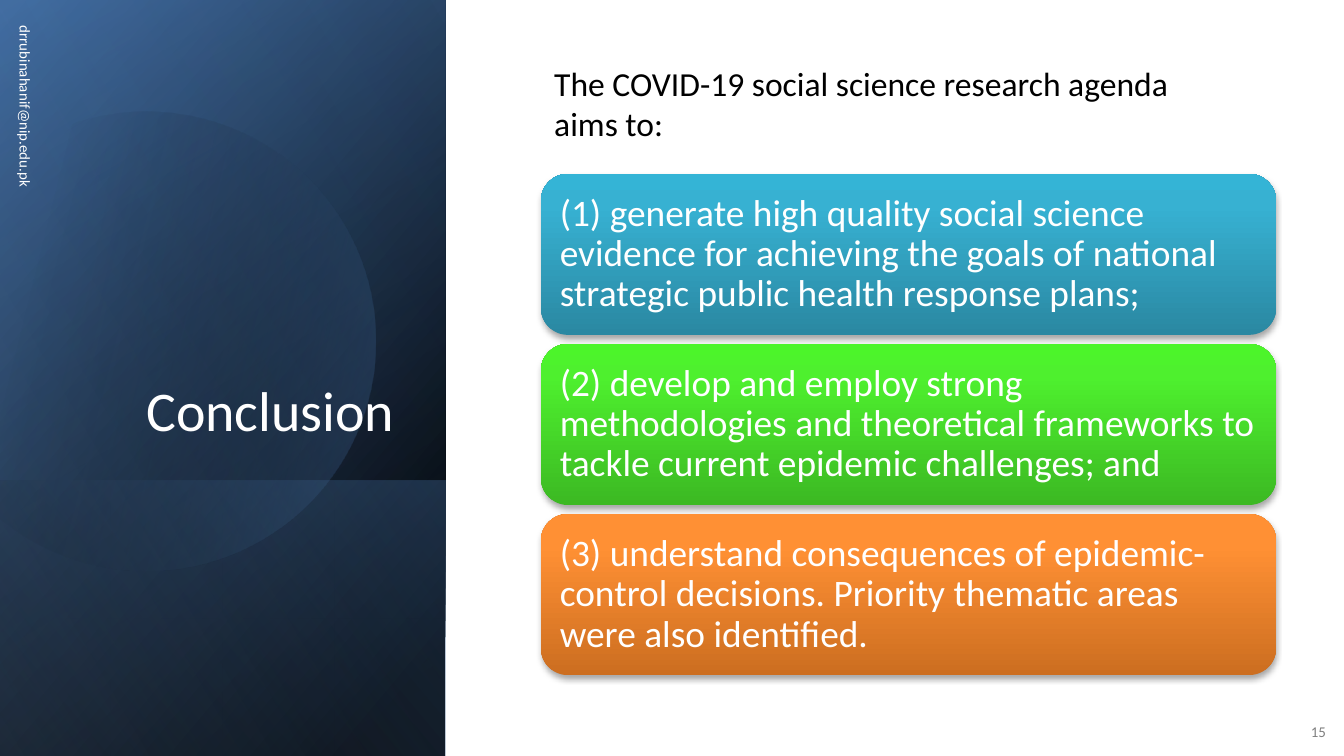
import math
import pptx
import pptx.util
import pptx.dml.color
import pptx.enum.shapes
import pptx.enum.text
import pptx.oxml

RGB = pptx.dml.color.RGBColor
WHITE = RGB(255, 255, 255)
BLACK = RGB(0, 0, 0)
GRAY = RGB(128, 128, 128)
BLUE = RGB(0x4F, 0x81, 0xBD)
DEEP = RGB(0x37, 0x60, 0x92)
PALE = RGB(0x95, 0xB3, 0xD7)
NS = 'xmlns:a="http://schemas.openxmlformats.org/drawingml/2006/main"'
KIND = pptx.enum.shapes.MSO_SHAPE
ALIGN = pptx.enum.text.PP_ALIGN
ANCHOR = pptx.enum.text.MSO_ANCHOR

# A 16:9 slide
deck = pptx.Presentation()
deck.slide_width = pptx.util.Inches(10)
deck.slide_height = deck.slide_width * 9 // 16
# One column and one row are each a hundredth of the slide
COL = deck.slide_width / 100
ROW = deck.slide_height / 100
slide = deck.slides.add_slide(deck.slide_layouts[6])


def grade(shape, stops, angle):
    """Fill with a linear gradient of (position, colour, opacity) stops."""
    marks = "".join(
        f'<a:gs pos="{pos * 1000}"><a:srgbClr val="{hue}">'
        f'<a:alpha val="{alpha * 1000}"/></a:srgbClr></a:gs>'
        for pos, hue, alpha in stops)
    fill = pptx.oxml.parse_xml(
        f'<a:gradFill {NS} rotWithShape="1"><a:gsLst>{marks}</a:gsLst>'
        f'<a:lin ang="{angle * 60000}" scaled="0"/></a:gradFill>')
    shape.shadow.inherit = False
    shape.fill.background()
    shape.line.fill.background()
    props = shape._element.spPr
    props.replace(props.find(pptx.oxml.ns.qn("a:noFill")), fill)


def label(home, text, x, y, w, h, size, hue, anchor=ANCHOR.MIDDLE, align=ALIGN.LEFT):
    """Add a wrapped text box, placed in columns and rows."""
    box = home.add_textbox(*map(round, (x * COL, y * ROW, w * COL, h * ROW)))
    frame = box.text_frame
    frame.word_wrap = True
    frame.vertical_anchor = anchor
    frame.text = text
    para = frame.paragraphs[0]
    para.alignment = align
    font = para.runs[0].font
    font.name = "Calibri"
    font.size = pptx.util.Pt(size)
    font.color.rgb = hue
    return box


# Left panel: turned gradient sheets with a cut disc between them
SIDE = 33.15 * COL
sheets = [
    (0, [(8, BLACK, 100), (100, DEEP, 100)], 50),
    (0, [(0, BLACK, 0), (99, BLUE, 46)], 30),
    (63.5, [(2, BLUE, 29), (100, BLACK, 30)], 130),
    (None, [(29, BLACK, 0), (100, BLUE, 43)], 30),
    (0, [(0, BLACK, 0), (99, PALE, 11)], 120),
]
for top, stops, angle in sheets:
    if top is None:
        # Arc closed by a chord, which the turn makes upright
        turn, half, ray = 16.1, 134.6, 17.1 * COL
        steps = [math.radians(turn - half + 2 * half * i / 90) for i in range(91)]
        dots = [(ray * math.cos(t), ray * math.sin(t)) for t in steps]
        path = slide.shapes.build_freeform(*dots[0])
        path.add_line_segments(dots[1:], close=True)
        sheet = path.convert_to_shape()
        sheet.left, sheet.top = round(-4.1 * COL), round(14.2 * ROW)
        sheet.rotation = 360 - turn
    else:
        tall = (100 - top) * ROW
        sheet = slide.shapes.add_shape(
            KIND.RECTANGLE, round((SIDE - tall) / 2),
            round(top * ROW + (tall - SIDE) / 2), round(tall), round(SIDE))
        sheet.rotation = 90
        sheet._element.spPr.xfrm.set("flipH", "1")
    grade(sheet, stops, angle)

# Title, address and page number
label(slide.shapes, "Conclusion", 4.75, 24.5, 25.6, 35, 30, WHITE,
      ANCHOR.BOTTOM, ALIGN.RIGHT)
mail = label(slide.shapes, "drrubinahanif@nip.edu.pk", -15, 29, 33.8, 5.33, 8, WHITE)
mail.rotation = 90
label(slide.shapes, "15", 95.95, 94.1, 3.7, 5.33, 8, GRAY, align=ALIGN.RIGHT)

# Three aim cards
cards = [
    ("(1) generate high quality social science evidence for achieving the goals "
     "of national strategic public health response plans;",
     RGB(0x2A, 0x88, 0xA2), RGB(0x37, 0xB1, 0xD2), RGB(0x34, 0xB4, 0xD6)),
    ("(2) develop and employ strong methodologies and theoretical frameworks "
     "to tackle current epidemic challenges; and",
     RGB(0x3C, 0xB9, 0x23), RGB(0x4E, 0xF0, 0x2E), RGB(0x4C, 0xF5, 0x2A)),
    ("(3) understand consequences of epidemic-control decisions. "
     "Priority thematic areas were also identified.",
     RGB(0xCC, 0x6E, 0x20), RGB(0xFF, 0x90, 0x34), RGB(0xFF, 0x91, 0x36)),
]
group = slide.shapes.add_group_shape().shapes
for i, (text, dark, mid, light) in enumerate(cards):
    y = 23 + 22.5 * i
    card = group.add_shape(KIND.ROUNDED_RECTANGLE, *map(
        round, (40.25 * COL, y * ROW, 54.7 * COL, 21.3 * ROW)))
    grade(card, [(0, dark, 100), (80, mid, 100), (100, light, 100)], 270)
    # Soft shadow below the card
    effects = card._element.spPr.find(pptx.oxml.ns.qn("a:effectLst"))
    effects.append(pptx.oxml.parse_xml(
        f'<a:outerShdw {NS} blurRad="40000" dist="23000" dir="5400000" '
        f'rotWithShape="0"><a:srgbClr val="{BLACK}"><a:alpha val="35000"/>'
        '</a:srgbClr></a:outerShdw>'))
    note = label(group, text, 40.85, y + 1, 53.5, 19.3, 20, WHITE)
    frame = note.text_frame
    frame.margin_left = frame.margin_right = pptx.util.Inches(0.08)
    frame.margin_top = frame.margin_bottom = pptx.util.Inches(0.08)
    frame.paragraphs[0].line_spacing = 0.9

# Lead-in above the cards
label(slide.shapes, "The COVID-19 social science research agenda aims to:",
      40.25, 7.45, 50, 12.6, 18, BLACK, ANCHOR.TOP)

deck.save("out.pptx")
